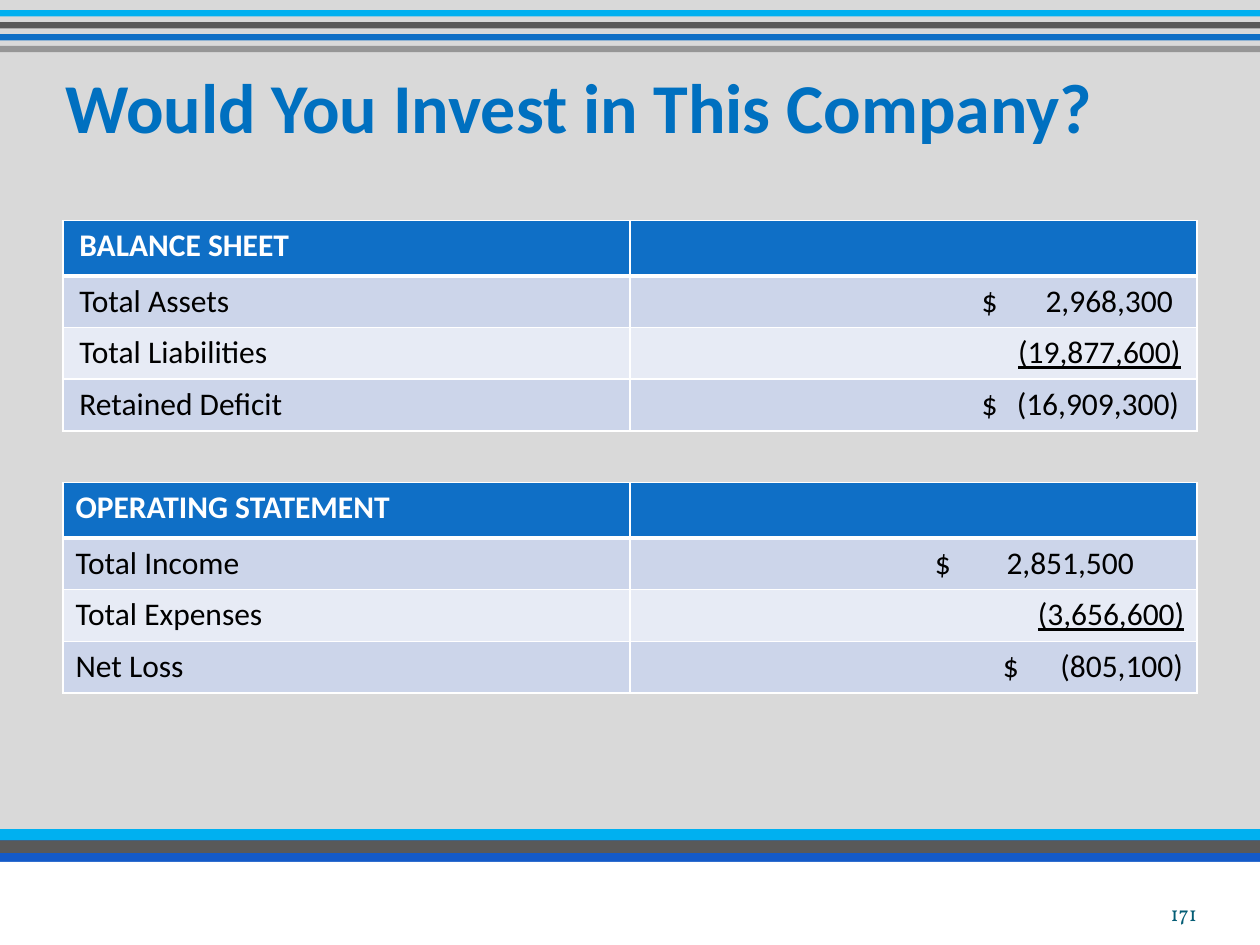
import pptx
import pptx.util
import pptx.dml.color
import pptx.enum.shapes
import pptx.enum.text
import pptx.oxml
import pptx.oxml.ns
from lxml import etree

Inches, Pt = pptx.util.Inches, pptx.util.Pt
ALIGN, ANCHOR = pptx.enum.text.PP_ALIGN, pptx.enum.text.MSO_ANCHOR
qn = pptx.oxml.ns.qn

COLORS = {
    "background": "D9D9D9", "blue": "0F6FC6", "cyan": "00B0F0", "dark": "595959",
    "gray": "969696", "royal": "145AC8", "white": "FFFFFF", "black": "000000",
    "title": "0070C0", "number": "045D75", "band": "CCD5EA", "light": "E7EBF5",
}
# Label, amount, underline, tab stops (dollar sign, right edge of the amount)
BALANCE = [
    ("Total Assets", "\t$\t2,968,300", False, (2.66, 4.18)),
    ("Total Liabilities", "(19,877,600)", True, ()),
    ("Retained Deficit", "\t$\t(16,909,300)", False, (2.66, 4.23)),
]
OPERATING = [
    ("Total Income", "\t$\t2,851,500", False, (2.32, 3.9)),
    ("Total Expenses", "(3,656,600)", True, ()),
    ("Net Loss", "\t$\t(805,100)", False, (2.86, 4.29)),
]


def rgb(name):
    return pptx.dml.color.RGBColor.from_string(COLORS[name])


def write(p, text, color, **formats):
    r = p.add_run()
    r.text = text
    r.font.color.rgb = rgb(color)
    for name, value in formats.items():
        setattr(r.font, name, value)


def add_bands(s, left, top, width, bands):
    """Stack full-width bars given as (offset, height, colour)."""
    for offset, height, color in bands:
        sp = s.shapes.add_shape(pptx.enum.shapes.MSO_SHAPE.RECTANGLE, Inches(left),
                                Inches(top + offset), Inches(width), Inches(height))
        sp.shadow.inherit = False
        sp.fill.solid()
        sp.fill.fore_color.rgb = rgb(color)
        sp.line.fill.background()


def add_title(s, left, top, width, height, text):
    sp = s.shapes.title
    box = {"left": left, "top": top, "width": width, "height": height}
    for name, value in box.items():
        setattr(sp, name, Inches(value))
    tf = sp.text_frame
    tf.vertical_anchor = ANCHOR.MIDDLE
    tf.word_wrap = True
    p = tf.paragraphs[0]
    p.alignment = ALIGN.LEFT
    p.line_spacing = 0.9
    write(p, text, "title", name="Calibri", size=Pt(40), bold=True)


def add_borders(cell, bottom, top):
    tcPr = cell._tc.get_or_add_tcPr()
    for side, width in {"L": 1, "R": 1, "T": top, "B": bottom}.items():
        ln = etree.SubElement(tcPr, qn(f"a:ln{side}"), w=str(Pt(width)))
        fill = etree.SubElement(ln, qn("a:solidFill"))
        etree.SubElement(fill, qn("a:srgbClr"), val=COLORS["white"])


def add_tabs(p, dollar, edge):
    tabs = etree.SubElement(p._p.get_or_add_pPr(), qn("a:tabLst"))
    for pos, algn in ((dollar, "l"), (edge, "r")):
        etree.SubElement(tabs, qn("a:tab"), pos=str(Inches(pos)), algn=algn)


def add_statement(s, left, top, width, heading, rows, inset):
    head_h, row_h = 0.44, 0.41
    lines = [(heading, "", False, ())] + rows
    table = s.shapes.add_table(len(lines), 2, Inches(left), Inches(top), Inches(width),
                               Inches(head_h + row_h * len(rows))).table
    for col in table.columns:
        col.width = Inches(width / 2)
    for i, (label, amount, underline, tabs) in enumerate(lines):
        head = i == 0
        table.rows[i].height = Inches(head_h if head else row_h)
        fill = "blue" if head else "band" if i % 2 else "light"
        for j, text in enumerate((label, amount)):
            cell = table.cell(i, j)
            cell.margin_left = cell.margin_right = Inches(inset)
            add_borders(cell, 3 if head else 1, 3 if i == 1 else 1)
            cell.fill.solid()
            cell.fill.fore_color.rgb = rgb(fill)
            p = cell.text_frame.paragraphs[0]
            if j and tabs:
                add_tabs(p, *tabs)
            elif j:
                p.alignment = ALIGN.RIGHT
            if text:
                write(p, text, "white" if head else "black", name="Calibri",
                      size=Pt(18), bold=head, underline=bool(j) and underline)


def add_page_number(s, left, top, width, height, text):
    tf = s.shapes.add_textbox(Inches(left), Inches(top), Inches(width),
                              Inches(height)).text_frame
    formats = {"word_wrap": True, "vertical_anchor": ANCHOR.BOTTOM, "margin_left": 0,
               "margin_right": 0, "margin_top": 0, "margin_bottom": 0}
    for name, value in formats.items():
        setattr(tf, name, value)
    p = tf.paragraphs[0]
    p.alignment = ALIGN.RIGHT
    write(p, text, "number", name="Vollkorn", size=Pt(12))


def main():
    prs = pptx.Presentation()
    prs.slide_width, prs.slide_height = Inches(10), Inches(7.5)
    s = prs.slides.add_slide(prs.slide_layouts[5])
    s.background.fill.solid()
    s.background.fill.fore_color.rgb = rgb("background")

    stripes = ("cyan", "dark", "blue", "gray")
    add_bands(s, 0, 0.08, 10, [(i * 0.095, 0.05, c) for i, c in enumerate(stripes)])
    add_bands(s, 0, 6.58, 10, [(0, 0.11, "cyan"), (0.09, 0.18, "royal"),
                               (0.09, 0.1, "dark"), (0.26, 0.66, "white")])
    add_title(s, 0.42, 0.42, 9, 0.92, "Would You Invest in This Company?")
    add_statement(s, 0.5, 1.75, 9, "BALANCE SHEET", BALANCE, 0.13)
    add_statement(s, 0.5, 3.83, 9, "OPERATING STATEMENT", OPERATING, 0.1)
    add_page_number(s, 7.17, 6.95, 2.33, 0.4, "171")
    prs.save("out.pptx")


if __name__ == "__main__":
    main()
